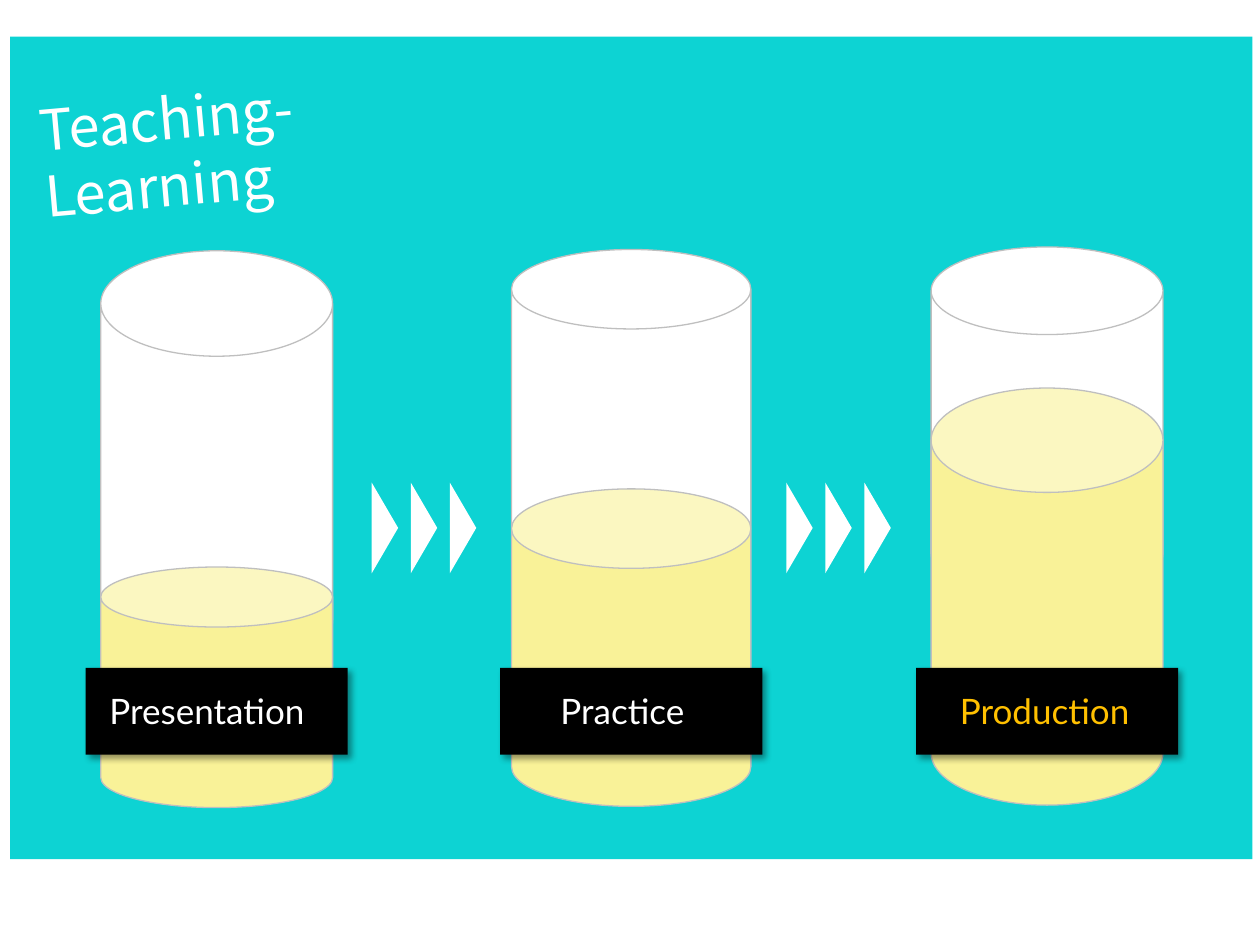
from lxml import etree
from pptx import Presentation
from pptx.dml.color import RGBColor
from pptx.enum.shapes import MSO_SHAPE
from pptx.enum.text import MSO_ANCHOR, MSO_AUTO_SIZE, PP_ALIGN
from pptx.oxml.ns import qn
from pptx.util import Inches, Pt

RECT, CAN, TRI = MSO_SHAPE.RECTANGLE, MSO_SHAPE.CAN, MSO_SHAPE.ISOSCELES_TRIANGLE
LEFT, TOP, FIXED = PP_ALIGN.LEFT, MSO_ANCHOR.TOP, MSO_AUTO_SIZE.NONE

TEAL, WHITE, CREAM = "0DD3D3", "FFFFFF", "F9F298"
GREY, BLACK, GOLD = "BFBFBF", "000000", "FFC000"


def paint(color):
    return RGBColor.from_string(color)


def draw(slide, kind, box, fill, line=None):
    shape = slide.shapes.add_shape(kind, *map(Inches, box))
    shape.shadow.inherit = False
    shape.fill.solid()
    shape.fill.fore_color.rgb = paint(fill)
    if line:
        shape.line.color.rgb = paint(line)
        shape.line.width = Pt(0.75)
    else:
        shape.line.fill.background()
    return shape


def write(shape, text, size=20, font="Lato", color=WHITE, wrap=False, space=None):
    frame = shape.text_frame
    frame.word_wrap = wrap
    frame.auto_size = FIXED
    frame.vertical_anchor = TOP
    para = frame.paragraphs[0]
    para.alignment = LEFT
    if space:
        para.line_spacing = Pt(space)
    run = para.add_run()
    run.text = text
    run.font.size = Pt(size)
    run.font.name = font
    run.font.color.rgb = paint(color)


def shade(shape):
    effects = shape._element.spPr.find(qn("a:effectLst"))
    outer = etree.SubElement(effects, qn("a:outerShdw"), blurRad=str(Pt(4)),
                             dist=str(Pt(3)), dir=str(45 * 60000))
    tint = etree.SubElement(outer, qn("a:srgbClr"), val=BLACK)
    etree.SubElement(tint, qn("a:alpha"), val="40000")


def add_title(slide, box, text):
    title = slide.shapes.title
    title.left, title.top, title.width, title.height = map(Inches, box)
    title.rotation = 354.9
    write(title, text, size=32, font="Noto Sans CJK SC", wrap=True, space=38)
    slide.shapes._spTree.append(title._element)


def add_tube(slide, box, glass, juice):
    left, top, width, height = box
    depth, rim = glass
    draw(slide, CAN, (left, top, width, depth), WHITE, GREY).adjustments[0] = rim
    level, rim = juice
    fill = draw(slide, CAN, (left, top + height - level, width, level), CREAM, GREY)
    fill.adjustments[0] = rim


def add_label(slide, box, text, inset, color):
    left, top, width, height = box
    shade(draw(slide, RECT, box, BLACK))
    area = (left + inset, top + 0.12, width - inset, 0.44)
    write(slide.shapes.add_textbox(*map(Inches, area)), text, color=color)


def add_arrows(slide, box, count=3):
    left, top, width, height = box
    thick = 0.21
    step = (width - thick) / (count - 1)
    for i in range(count):
        mid = left + i * step + thick / 2
        area = (mid - height / 2, top + (height - thick) / 2, height, thick)
        draw(slide, TRI, area, WHITE).rotation = 90


def main():
    deck = Presentation()
    deck.slide_width, deck.slide_height = Inches(10), Inches(7.5)
    slide = deck.slides.add_slide(deck.slide_layouts[5])
    draw(slide, RECT, (0.08, 0.29, 9.86, 6.53), TEAL)

    stages = [
        ((0.8, 1.99, 1.84, 4.42), (3.35, 0.455), (1.91, 0.259),
         0.68, "Presentation", 0.09, WHITE),
        ((4.06, 1.98, 1.9, 4.42), (2.52, 0.332), (2.52, 0.332),
         3.97, "Practice", 0.38, WHITE),
        ((7.39, 1.96, 1.84, 4.43), (2.78, 0.378), (3.31, 0.45),
         7.27, "Production", 0.25, GOLD),
    ]
    for box, glass, juice, left, text, inset, color in stages:
        add_tube(slide, box, glass, juice)
        add_label(slide, (left, 5.3, 2.08, 0.69), text, inset, color)
    for left in (2.95, 6.24):
        add_arrows(slide, (left, 3.83, 0.83, 0.72))

    add_title(slide, (0.23, 0.62, 2.3, 1.16), "Teaching-Learning")
    deck.save("out.pptx")


if __name__ == "__main__":
    main()
